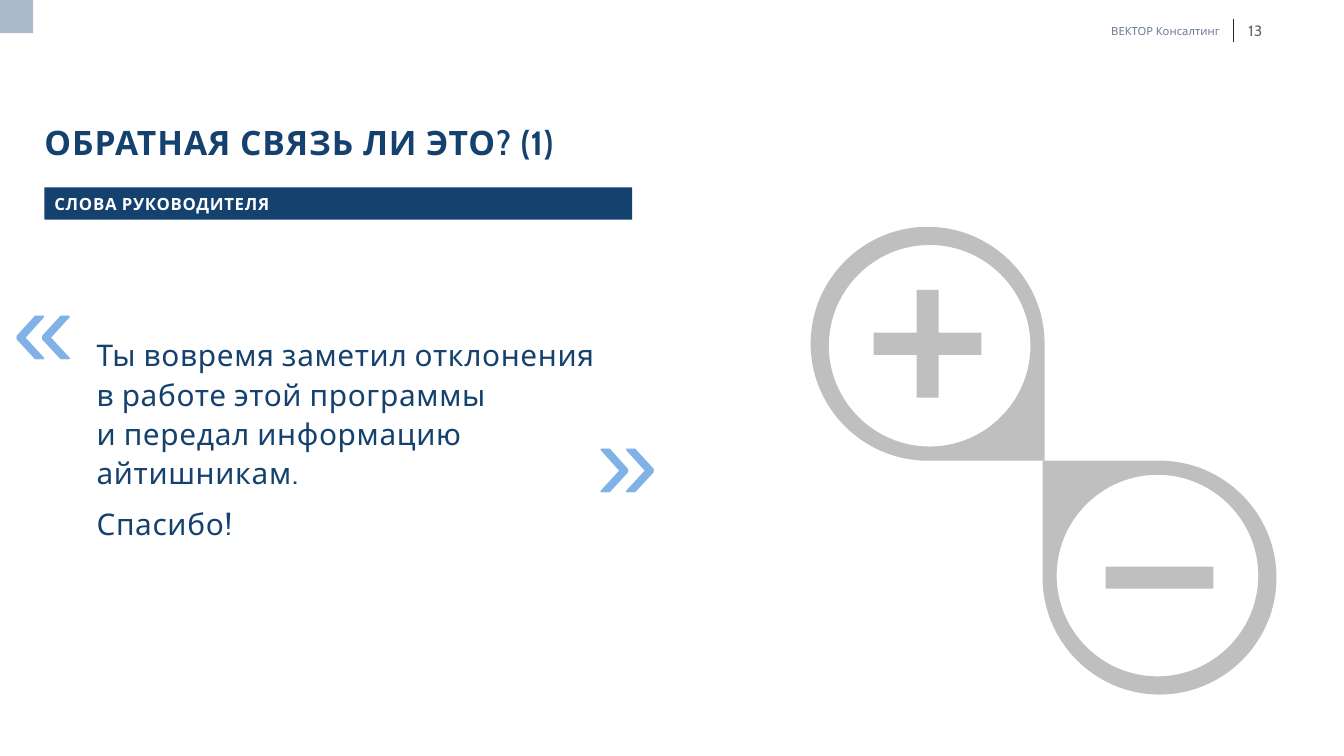
from math import cos, radians, sin

from lxml.etree import SubElement
from pptx import Presentation
from pptx.dml.color import RGBColor
from pptx.enum.shapes import MSO_CONNECTOR, MSO_SHAPE
from pptx.enum.text import MSO_ANCHOR, MSO_AUTO_SIZE, PP_ALIGN
from pptx.oxml.ns import qn
from pptx.util import Inches, Pt

NAVY = "15416F"
GREY = "BFBFBF"
FONT = "Cabin"
NO_BREAK_SPACE = chr(160)
OUTER_RADIUS = 1.16
INNER_RADIUS = 1.0
INNER_SHIFT = 0.02
CURVE_HANDLE = 0.55
BAR_LENGTH = 1.07
BAR_WIDTH = 0.22


def color(value):
    return RGBColor.from_string(value)


def fill_plain(shape, fill):
    shape.shadow.inherit = False
    shape.fill.solid()
    shape.fill.fore_color.rgb = color(fill)
    shape.line.fill.background()


def add_rectangle(slide, left, top, width, height, fill):
    shape = slide.shapes.add_shape(
        MSO_SHAPE.RECTANGLE, Inches(left), Inches(top), Inches(width), Inches(height))
    fill_plain(shape, fill)
    return shape


def write_text(shape, text, size, text_color, font=FONT, bold=False, spacing=0,
               align=PP_ALIGN.LEFT, anchor=MSO_ANCHOR.TOP, inset=True,
               line_spacing=None, space_after=0):
    """Fill a shape with uniformly formatted text; spacing is in points."""
    frame = shape.text_frame
    frame.text = text
    frame.word_wrap = True
    frame.auto_size = MSO_AUTO_SIZE.NONE
    frame.vertical_anchor = anchor
    if not inset:
        frame.margin_left = frame.margin_right = 0
        frame.margin_top = frame.margin_bottom = 0
    for paragraph in frame.paragraphs:
        paragraph.alignment = align
        paragraph.line_spacing = line_spacing
        paragraph.space_after = Pt(space_after)
        for run in paragraph.runs:
            run.font.name = font
            run.font.size = Pt(size)
            run.font.bold = bold
            run.font.color.rgb = color(text_color)
            run._r.get_or_add_rPr().set("spc", str(round(spacing * 100)))


def add_text(slide, left, top, width, height, text, size, text_color, **formatting):
    box = slide.shapes.add_textbox(
        Inches(left), Inches(top), Inches(width), Inches(height))
    write_text(box, text, size, text_color, **formatting)


def add_line(slide, x, top, bottom, line_color, width):
    line = slide.shapes.add_connector(
        MSO_CONNECTOR.STRAIGHT, Inches(x), Inches(top), Inches(x), Inches(bottom))
    line.line.color.rgb = color(line_color)
    line.line.width = Pt(width)
    SubElement(line._element.spPr, qn("a:effectLst"))


def quarter_arcs(start, turn, count):
    """Return handle, handle and end point of each quarter arc of a unit circle."""
    points = []
    for index in range(count):
        (x1, y1), (x2, y2) = [
            (cos(radians(angle)), sin(radians(angle)))
            for angle in (start + turn * index, start + turn * (index + 1))]
        points += [(x1 + CURVE_HANDLE * x2, y1 + CURVE_HANDLE * y2),
                   (x2 + CURVE_HANDLE * x1, y2 + CURVE_HANDLE * y1), (x2, y2)]
    return points


def bend_segments(shape, straight_count):
    """Turn every three segments after the straight ones into one cubic curve."""
    segments = list(shape._element.iter(qn("a:lnTo")))[straight_count:]
    for index in range(0, len(segments), 3):
        group = segments[index:index + 3]
        outline = group[0].getparent()
        curve = SubElement(outline, qn("a:cubicBezTo"))
        group[0].addprevious(curve)
        for segment in group:
            curve.append(segment[0])
            outline.remove(segment)


def add_drop(slide, x, y, direction):
    """Draw a drop with a round hole; its corner is lower right for 1, upper left for -1."""
    def place(points, radius, shift=0):
        return [(Inches(x + direction * (shift + radius * across)),
                 Inches(y + direction * (shift + radius * down)))
                for across, down in points]

    outline = place([(1, 0), (1, 1), (0, 1)] + quarter_arcs(90, 90, 3), OUTER_RADIUS)
    hole = place([(0, 1)] + quarter_arcs(90, -90, 4), INNER_RADIUS, INNER_SHIFT)
    builder = slide.shapes.build_freeform(*outline[0])
    builder.add_line_segments(outline[1:], close=True)
    builder.move_to(*hole[0])
    builder.add_line_segments(hole[1:], close=True)
    drop = builder.convert_to_shape()
    bend_segments(drop, straight_count=2)
    fill_plain(drop, GREY)


def add_sign_bar(slide, x, y, width, height):
    add_rectangle(slide, x - width / 2, y - height / 2, width, height, GREY)


def add_header(slide):
    add_rectangle(slide, 0, 0, 0.33, 0.33, "AABACA")
    add_line(slide, 12.23, 0.19, 0.42, "262626", 0.5)
    add_text(slide, 10.73, 0.24, 1.37, 0.13, "ВЕКТОР Консалтинг", 8, "697A98",
             align=PP_ALIGN.RIGHT, anchor=MSO_ANCHOR.MIDDLE, inset=False)
    add_text(slide, 12.24, 0.24, 0.42, 0.13, "13", 10.7, "666666", spacing=0.4,
             align=PP_ALIGN.CENTER, anchor=MSO_ANCHOR.MIDDLE, inset=False)


def add_headings(slide):
    title = slide.shapes.title
    title.left, title.top = Inches(0.44), Inches(1.21)
    title.width, title.height = Inches(5.83), Inches(0.4)
    write_text(title, "ОБРАТНАЯ СВЯЗЬ ЛИ ЭТО? (1)", 24, NAVY, bold=True,
               spacing=0.7, anchor=MSO_ANCHOR.BOTTOM, inset=False)
    subtitle = add_rectangle(slide, 0.44, 1.86, 5.83, 0.32, NAVY)
    write_text(subtitle, "СЛОВА РУКОВОДИТЕЛЯ", 12, "FFFFFF", bold=True,
               spacing=0.5, anchor=MSO_ANCHOR.MIDDLE)


def add_quote(slide):
    for mark, left, top in (("«", 0.03, 2.49), ("»", 5.82, 3.81)):
        add_text(slide, left, top, 0.91, 1.45, mark, 80, "80B2E7",
                 font="Arial", spacing=0.4, space_after=8)
    add_text(slide, 0.86, 3.26, 5.53, 1.79,
             f"Ты вовремя заметил отклонения в{NO_BREAK_SPACE}работе этой программы "
             f"и{NO_BREAK_SPACE}передал информацию айтишникам.\nСпасибо!",
             21.3, NAVY, spacing=0.5, line_spacing=1.1, space_after=8)


def add_plus_and_minus(slide):
    add_drop(slide, 9.2, 3.41, 1)
    add_sign_bar(slide, 9.2, 3.41, BAR_WIDTH, BAR_LENGTH)
    add_sign_bar(slide, 9.2, 3.41, BAR_LENGTH, BAR_WIDTH)
    add_drop(slide, 11.5, 5.73, -1)
    add_sign_bar(slide, 11.5, 5.73, BAR_LENGTH, BAR_WIDTH)


def main():
    presentation = Presentation()
    presentation.slide_width = Inches(13.33)
    presentation.slide_height = Inches(7.5)
    slide = presentation.slides.add_slide(presentation.slide_layouts[5])
    add_header(slide)
    add_headings(slide)
    add_plus_and_minus(slide)
    add_quote(slide)
    presentation.save("out.pptx")


if __name__ == "__main__":
    main()
